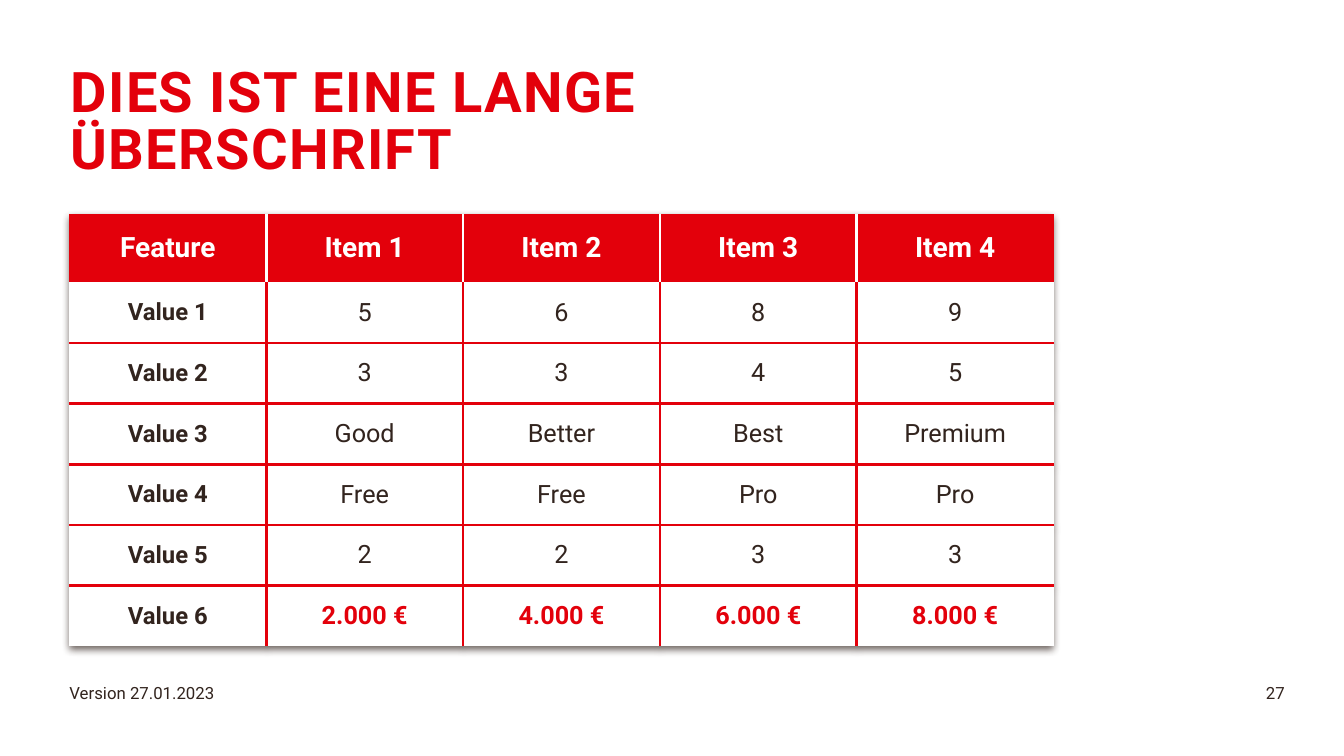
import pptx
import pptx.util
import pptx.dml.color
import pptx.enum.text
import pptx.oxml
import pptx.oxml.ns

Cm = pptx.util.Cm
Pt = pptx.util.Pt
PP_ALIGN = pptx.enum.text.PP_ALIGN
ANCHOR = pptx.enum.text.MSO_ANCHOR

COLORS = {"red": "E3000B", "dark": "32241E", "white": "FFFFFF", "shadow": "32241E"}
FONT = "Roboto"
HEADLINE = "DIES IST EINE LANGE ÜBERSCHRIFT"
VERSION = "Version 27.01.2023"
PAGE_NUMBER = "27"
FEATURES = [
    ("Feature", "Item 1", "Item 2", "Item 3", "Item 4"),
    ("Value 1", "5", "6", "8", "9"),
    ("Value 2", "3", "3", "4", "5"),
    ("Value 3", "Good", "Better", "Best", "Premium"),
    ("Value 4", "Free", "Free", "Pro", "Pro"),
    ("Value 5", "2", "2", "3", "3"),
    ("Value 6", "2.000 €", "4.000 €", "6.000 €", "8.000 €"),
]
COLUMN_WIDTH, HEADER_HEIGHT, ROW_HEIGHT = 4.96, 1.73, 1.53
NO_STYLE = "{2D5ABB26-0587-4C30-8999-92F81FD0307C}"
NAMESPACE = pptx.oxml.ns.nsdecls("a")


def format_paragraph(paragraph, size, color, bold=False, align=PP_ALIGN.LEFT):
    paragraph.alignment = align
    font = paragraph.font
    font.name, font.size, font.bold = FONT, Pt(size), bold
    font.color.rgb = pptx.dml.color.RGBColor.from_string(COLORS[color])


def clear_margins(frame):
    frame.margin_left = frame.margin_right = frame.margin_top = frame.margin_bottom = 0
    frame.word_wrap = True


def add_footer(slide, words, left, width, align):
    frame = slide.shapes.add_textbox(Cm(left), Cm(17.2), Cm(width), Cm(1.02)).text_frame
    clear_margins(frame)
    frame.text = words
    format_paragraph(frame.paragraphs[0], 12, "dark", align=align)


def set_borders(cell, borders):
    properties = cell._tc.get_or_add_tcPr()
    for position, (side, color) in enumerate(borders):
        properties.insert(position, pptx.oxml.parse_xml(
            f'<a:ln{side} {NAMESPACE} w="{Pt(2.25)}"><a:solidFill>'
            f'<a:srgbClr val="{COLORS[color]}"/></a:solidFill></a:ln{side}>'))


def fill_cell(cell, row, column):
    last_row, last_column = len(FEATURES) - 1, len(FEATURES[0]) - 1
    header = row == 0
    price = row == last_row and column > 0
    cell.text = FEATURES[row][column]
    cell.vertical_anchor = ANCHOR.MIDDLE
    cell.margin_left = cell.margin_right = Cm(0.5)
    cell.margin_top = cell.margin_bottom = 0
    size = 20 if header else 17 if column == 0 else 18
    color = "white" if header else "red" if price else "dark"
    format_paragraph(cell.text_frame.paragraphs[0], size, color,
                     header or column == 0 or price, PP_ALIGN.CENTER)
    cell.fill.solid()
    cell.fill.fore_color.rgb = pptx.dml.color.RGBColor.from_string(
        COLORS["red" if header else "white"])
    divider = "white" if header else "red"
    edges = [("L", divider, column > 0), ("R", divider, column < last_column),
             ("T", "red", row > 1), ("B", "red", 0 < row < last_row)]
    set_borders(cell, [(side, shade) for side, shade, shown in edges if shown])


def add_feature_table(slide):
    rows, columns = len(FEATURES), len(FEATURES[0])
    height = HEADER_HEIGHT + ROW_HEIGHT * (rows - 1)
    table = slide.shapes.add_table(rows, columns, Cm(1.75), Cm(5.38),
                                   Cm(COLUMN_WIDTH * columns), Cm(height)).table
    table.horz_banding = False
    properties = table._tbl.tblPr
    properties.find(pptx.oxml.ns.qn("a:tableStyleId")).text = NO_STYLE
    properties.insert(0, pptx.oxml.parse_xml(
        f'<a:effectLst {NAMESPACE}><a:outerShdw blurRad="{Cm(0.2)}" dist="{Cm(0.1)}" '
        f'dir="5400000" algn="t" rotWithShape="0"><a:srgbClr val="{COLORS["shadow"]}">'
        '<a:alpha val="70000"/></a:srgbClr></a:outerShdw></a:effectLst>'))
    for column in table.columns:
        column.width = Cm(COLUMN_WIDTH)
    for row, table_row in enumerate(table.rows):
        table_row.height = Cm(ROW_HEIGHT if row else HEADER_HEIGHT)
        for column, cell in enumerate(table_row.cells):
            fill_cell(cell, row, column)


def add_headline(slide):
    headline = slide.shapes.title
    headline.left, headline.top = Cm(1.78), Cm(1.68)
    headline.width, headline.height = Cm(20.83), Cm(2.84)
    frame = headline.text_frame
    clear_margins(frame)
    frame.auto_size = pptx.enum.text.MSO_AUTO_SIZE.NONE
    frame.vertical_anchor = ANCHOR.TOP
    frame.text = HEADLINE
    paragraph = frame.paragraphs[0]
    paragraph.line_spacing = 0.85
    paragraph.space_before = Pt(0)
    format_paragraph(paragraph, 40, "red", True)
    paragraph.runs[0].font._element.set("spc", "100")


def main():
    presentation = pptx.Presentation()
    presentation.slide_width, presentation.slide_height = Cm(33.87), Cm(19.05)
    slide = presentation.slides.add_slide(presentation.slide_layouts[5])
    add_headline(slide)
    add_feature_table(slide)
    add_footer(slide, VERSION, 1.75, 20.9, PP_ALIGN.LEFT)
    add_footer(slide, PAGE_NUMBER, 26.92, 5.46, PP_ALIGN.RIGHT)
    presentation.save("out.pptx")


if __name__ == "__main__":
    main()
